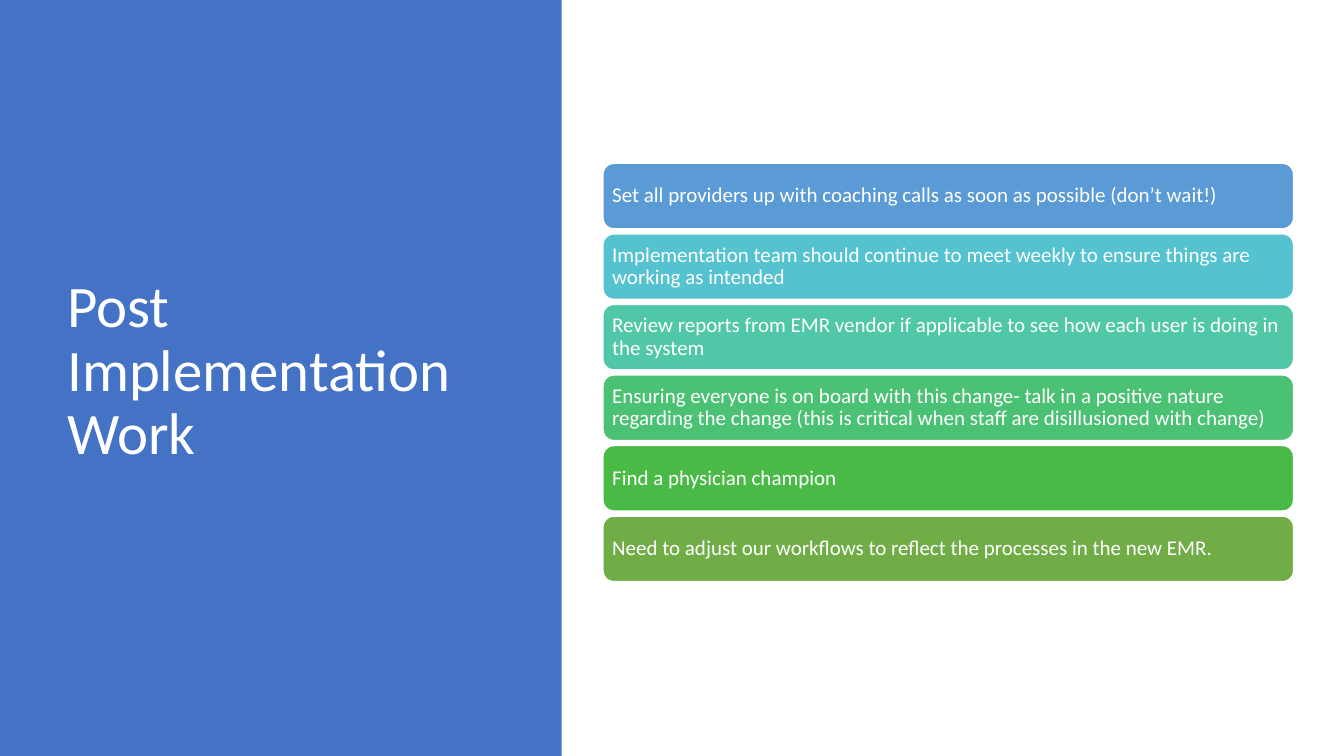
from pptx import Presentation
from pptx.dml.color import RGBColor
from pptx.enum.shapes import MSO_SHAPE
from pptx.enum.text import MSO_ANCHOR, PP_ALIGN
from pptx.util import Pt

PX = 9144  # 100 px to the inch
RECT = MSO_SHAPE.RECTANGLE
ROUND = MSO_SHAPE.ROUNDED_RECTANGLE
MIDDLE = MSO_ANCHOR.MIDDLE
LEFT = PP_ALIGN.LEFT

COLORS = {
    "white": "FFFFFF",
    "panel": "4472C4",
    "blue": "5B9BD5",
    "cyan": "55C3CF",
    "teal": "50C8A7",
    "mint": "4BC174",
    "green": "4ABA46",
    "olive": "70AD47",
}

STEPS = [
    ("blue", "Set all providers up with coaching calls as soon as possible (don’t wait!)"),
    ("cyan", "Implementation team should continue to meet weekly to ensure things are "
             "working as intended"),
    ("teal", "Review reports from EMR vendor if applicable to see how each user is doing "
             "in the system"),
    ("mint", "Ensuring everyone is on board with this change- talk in a positive nature "
             "regarding the change (this is critical when staff are disillusioned with change)"),
    ("green", "Find a physician champion"),
    ("olive", "Need to adjust our workflows to reflect the processes in the new EMR."),
]


def add_block(kind, left, top, width, height, color):
    """Add a filled shape without shadow or outline."""
    block = slide.shapes.add_shape(kind, left * PX, top * PX, width * PX, height * PX)
    block.shadow.inherit = False
    block.fill.solid()
    block.fill.fore_color.rgb = RGBColor.from_string(COLORS[color])
    block.line.fill.background()
    return block


def set_text(shape, text, size):
    """Write white, left-aligned, vertically centred text."""
    frame = shape.text_frame
    frame.word_wrap = True
    frame.vertical_anchor = MIDDLE
    frame.text = text
    para = frame.paragraphs[0]
    para.alignment = LEFT
    para.line_spacing = 0.9
    font = para.runs[0].font
    font.name = "Calibri"
    font.size = Pt(size)
    font.color.rgb = RGBColor.from_string(COLORS["white"])


deck = Presentation()
deck.slide_width = 1333 * PX
deck.slide_height = 750 * PX
slide = deck.slides.add_slide(deck.slide_layouts[6])

add_block(RECT, 0, 0, 557, 750, "panel")
title = slide.shapes.add_textbox(57 * PX, 68 * PX, 416 * PX, 602 * PX)
set_text(title, "Post Implementation Work", 42)

for row, (color, text) in enumerate(STEPS):
    bar = add_block(ROUND, 598, 162 + row * 70, 685, 65, color)
    bar.line.color.rgb = RGBColor.from_string(COLORS["white"])
    bar.line.width = Pt(1)
    frame = bar.text_frame
    frame.margin_left = frame.margin_right = 6 * PX
    frame.margin_top = frame.margin_bottom = 6 * PX
    set_text(bar, text, 15)

deck.save("out.pptx")
